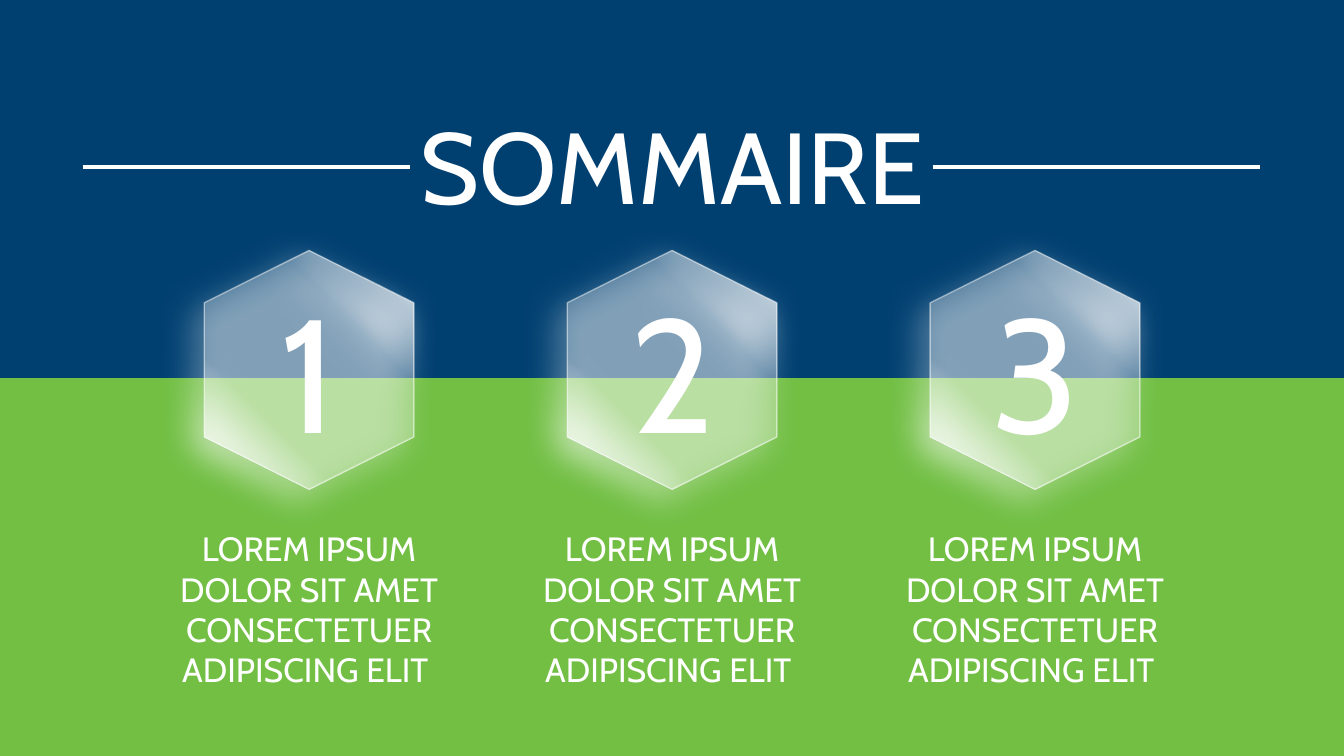
from pptx import Presentation
from pptx.dml.color import RGBColor
from pptx.enum.shapes import MSO_CONNECTOR, MSO_SHAPE
from pptx.enum.text import MSO_AUTO_SIZE, PP_ALIGN
from pptx.oxml import parse_xml
from pptx.oxml.ns import nsdecls, qn
from pptx.util import Inches, Pt

RECTANGLE = MSO_SHAPE.RECTANGLE
HEXAGON = MSO_SHAPE.HEXAGON
STRAIGHT = MSO_CONNECTOR.STRAIGHT
CENTER = PP_ALIGN.CENTER
GROW = MSO_AUTO_SIZE.SHAPE_TO_FIT_TEXT

COLORS = {"navy": "004071", "green": "72BF44", "white": "FFFFFF"}
GLASS_STOPS = [(0, 100), (30, 30), (70, 30), (100, 100)]
TOPIC = "LOREM IPSUM\vDOLOR SIT AMET CONSECTETUER ADIPISCING ELIT "


def rgb(name):
    return RGBColor.from_string(COLORS[name])


def write_text(frame, text, size, color="white", font="Cabin", align=CENTER):
    frame.word_wrap = True
    frame.auto_size = GROW
    paragraph = frame.paragraphs[0]
    paragraph.text = text
    paragraph.alignment = align
    for run in paragraph.runs:
        run.font.size = Pt(size)
        run.font.name = font
        run.font.color.rgb = rgb(color)


class SlideBuilder:
    def __init__(self, slide):
        self.slide = slide

    def band(self, top, height, color):
        band = self.slide.shapes.add_shape(
            RECTANGLE, 0, Inches(top), Inches(13.33), Inches(height))
        band.shadow.inherit = False
        band.fill.solid()
        band.fill.fore_color.rgb = rgb(color)
        band.line.fill.background()

    def label(self, box, text, size, shapes=None):
        target = self.slide.shapes if shapes is None else shapes
        label = target.add_textbox(*map(Inches, box))
        write_text(label.text_frame, text, size)

    def rule(self, left, y, length):
        rule = self.slide.shapes.add_connector(
            STRAIGHT, Inches(left), Inches(y), Inches(left + length), Inches(y))
        rule.line.color.rgb = rgb("white")
        rule.line.width = Pt(3)
        rule._element.spPr.append(parse_xml(f"<a:effectLst {nsdecls('a')}/>"))

    def glass_hexagon(self, shapes, box):
        hexagon = shapes.add_shape(HEXAGON, *map(Inches, box))
        hexagon.rotation = 90
        hexagon.line.color.rgb = rgb("white")
        hexagon.line.width = Pt(1)
        hexagon.shadow.inherit = False
        white = COLORS["white"]
        properties = hexagon._element.spPr
        line_color = properties.find(f"{qn('a:ln')}/{qn('a:solidFill')}/{qn('a:srgbClr')}")
        line_color.append(parse_xml(f'<a:alpha {nsdecls("a")} val="50000"/>'))
        stops = "".join(
            f'<a:gs pos="{position * 1000}"><a:srgbClr val="{white}">'
            f'<a:alpha val="{opacity * 1000}"/></a:srgbClr></a:gs>'
            for position, opacity in GLASS_STOPS)
        properties.find(qn("a:prstGeom")).addnext(parse_xml(
            f'<a:gradFill {nsdecls("a")} rotWithShape="1"><a:gsLst>{stops}</a:gsLst>'
            f'<a:lin ang="{45 * 60000}" scaled="0"/></a:gradFill>'))
        properties.find(qn("a:effectLst")).append(parse_xml(
            f'<a:outerShdw {nsdecls("a")} blurRad="{Pt(24)}" dist="{Pt(11)}" '
            f'dir="{135 * 60000}" algn="ctr" rotWithShape="0">'
            f'<a:srgbClr val="{white}"/></a:outerShdw>'))

    def agenda_item(self, left, number, text):
        shapes = self.slide.shapes.add_group_shape().shapes
        self.label((left, 5.19, 3.09, 1.72), text, 24, shapes)
        self.glass_hexagon(shapes, (left + 0.36, 2.63, 2.37, 2.08))
        self.label((left + 0.37, 2.65, 2.36, 2.04), str(number), 115, shapes)


def main():
    deck = Presentation()
    deck.slide_width = Inches(13.33)
    deck.slide_height = Inches(7.5)
    builder = SlideBuilder(deck.slides.add_slide(deck.slide_layouts[6]))

    builder.band(0, 4.58, "navy")
    builder.band(3.75, 3.75, "green")
    for number in (3, 2, 1):
        builder.agenda_item(1.52 + 3.6 * (number - 1), number, TOPIC)
    for left in (9.25, 0.82):
        builder.rule(left, 1.66, 3.25)
    builder.label((0, 0.98, 13.34, 1.31), "SOMMAIRE", 72)

    deck.save("out.pptx")


if __name__ == "__main__":
    main()
